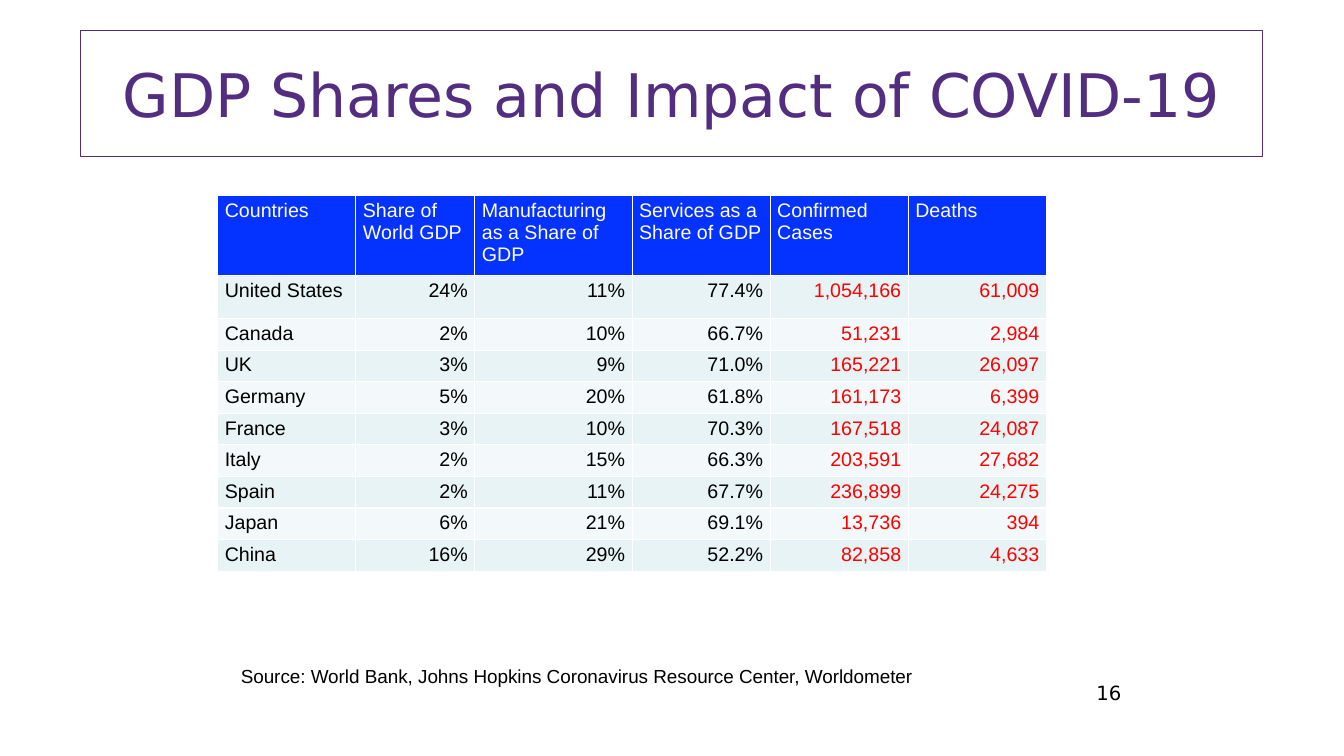
from dataclasses import dataclass

from pptx import Presentation
from pptx import util as u
from pptx.dml.color import RGBColor
from pptx.enum import text


@dataclass(frozen=True)
class Theme:
    purple: str = "522D80"
    header: str = "0432FF"
    bands: tuple = ("E7F3F4", "F3F9FA")
    white: str = "FFFFFF"
    black: str = "000000"
    red: str = "FF0000"
    heading_font: str = "DejaVu Sans"
    body_font: str = "Arial"
    title_size: float = 42.9
    body_size: float = 14
    source_size: float = 13.5


theme = Theme()


def format_paragraph(paragraph, font_name, size, color, alignment):
    paragraph.alignment = alignment
    paragraph.font.name = font_name
    paragraph.font.size = u.Pt(size)
    paragraph.font.bold = False
    paragraph.font.color.rgb = RGBColor.from_string(color)


left, center, right = text.PP_ALIGN.LEFT, text.PP_ALIGN.CENTER, text.PP_ALIGN.RIGHT

presentation = Presentation()
presentation.slide_width = u.Inches(13.33)
presentation.slide_height = u.Inches(7.5)
slide = presentation.slides.add_slide(presentation.slide_layouts[5])

page_number = slide.shapes.add_textbox(u.Inches(8.89), u.Inches(6.71), u.Inches(2.33), u.Inches(0.4))
page_number.text_frame.word_wrap = True
page_number.text_frame.text = "16"
format_paragraph(page_number.text_frame.paragraphs[0], theme.heading_font, theme.body_size, theme.black, right)

title = slide.shapes.title
title.left, title.top = u.Inches(0.8), u.Inches(0.3)
title.width, title.height = u.Inches(11.72), u.Inches(1.25)
title.line.color.rgb = RGBColor.from_string(theme.purple)
title.line.width = u.Pt(0.75)
title.text_frame.text = "GDP Shares and Impact of COVID-19"
title.text_frame.auto_size = text.MSO_AUTO_SIZE.NONE
title.text_frame.vertical_anchor = text.MSO_ANCHOR.MIDDLE
format_paragraph(title.text_frame.paragraphs[0], theme.heading_font, theme.title_size, theme.purple, center)

rows = [
    ("Countries", "Share of World GDP", "Manufacturing as a Share of GDP",
     "Services as a Share of GDP", "Confirmed Cases", "Deaths"),
    ("United States", "24%", "11%", "77.4%", "1,054,166", "61,009"),
    ("Canada", "2%", "10%", "66.7%", "51,231", "2,984"),
    ("UK", "3%", "9%", "71.0%", "165,221", "26,097"),
    ("Germany", "5%", "20%", "61.8%", "161,173", "6,399"),
    ("France", "3%", "10%", "70.3%", "167,518", "24,087"),
    ("Italy", "2%", "15%", "66.3%", "203,591", "27,682"),
    ("Spain", "2%", "11%", "67.7%", "236,899", "24,275"),
    ("Japan", "6%", "21%", "69.1%", "13,736", "394"),
    ("China", "16%", "29%", "52.2%", "82,858", "4,633"),
]
column_widths = [1.37, 1.18, 1.56, 1.37, 1.37, 1.37]
row_heights = [0.79, 0.43] + [0.3] * 8
table = slide.shapes.add_table(
    len(rows), len(column_widths), u.Inches(2.16), u.Inches(1.94),
    u.Inches(sum(column_widths)), u.Inches(sum(row_heights))).table
for column, width in zip(table.columns, column_widths):
    column.width = u.Inches(width)

for row_index, values in enumerate(rows):
    table.rows[row_index].height = u.Inches(row_heights[row_index])
    is_header = row_index == 0
    fill = theme.header if is_header else theme.bands[(row_index - 1) % 2]
    for column_index, value in enumerate(values):
        cell = table.cell(row_index, column_index)
        cell.margin_left = cell.margin_right = u.Inches(0.07)
        cell.margin_top = cell.margin_bottom = u.Inches(0.04)
        cell.fill.solid()
        cell.fill.fore_color.rgb = RGBColor.from_string(fill)
        cell.text = value
        color = theme.white if is_header else theme.red if column_index >= 4 else theme.black
        alignment = left if is_header or column_index == 0 else right
        format_paragraph(cell.text_frame.paragraphs[0], theme.body_font, theme.body_size, color, alignment)

source = slide.shapes.add_textbox(u.Inches(2.29), u.Inches(6.54), u.Inches(6.96), u.Inches(0.33))
source.text_frame.word_wrap = False
source.text_frame.auto_size = text.MSO_AUTO_SIZE.SHAPE_TO_FIT_TEXT
source.text_frame.text = "Source: World Bank, Johns Hopkins Coronavirus Resource Center, Worldometer"
format_paragraph(source.text_frame.paragraphs[0], theme.body_font, theme.source_size, theme.black, left)

presentation.save("out.pptx")
